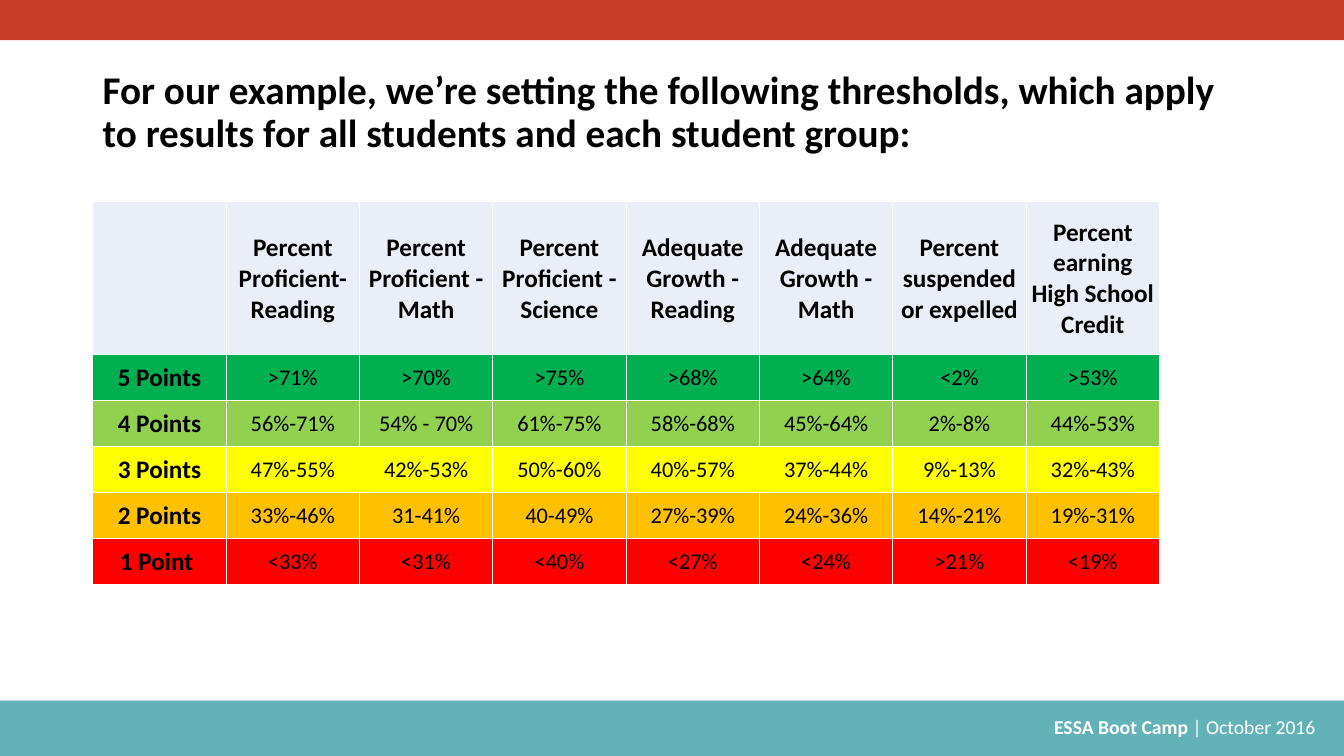
from pptx import Presentation
from pptx.dml.color import RGBColor
from pptx.enum.shapes import MSO_SHAPE as Shape
from pptx.enum.text import MSO_ANCHOR as Anchor, PP_ALIGN as Align
from pptx.oxml.ns import qn
from pptx.util import Inches, Pt
from lxml.etree import SubElement

WHITE = RGBColor(0xFF, 0xFF, 0xFF)
BLACK = RGBColor(0x00, 0x00, 0x00)
RED_BAR = RGBColor(0xC8, 0x3C, 0x2A)
TEAL = RGBColor(0x63, 0xB2, 0xB8)
PALE = RGBColor(0xEA, 0xEF, 0xF7)
GREEN = RGBColor(0x00, 0xB0, 0x50)
LIME = RGBColor(0x92, 0xD0, 0x50)
YELLOW = RGBColor(0xFF, 0xFF, 0x00)
AMBER = RGBColor(0xFF, 0xC0, 0x00)
RED = RGBColor(0xFF, 0x00, 0x00)
FONT = "Calibri"
WIDTH, HEIGHT = 13.33, 7.5
HEAD_H = 1.52

TITLE = ("For our example, we’re setting the following thresholds, which apply "
         "to results for all students and each student group:")
ROWS = [
    (PALE, ["", "Percent Proficient- Reading", "Percent Proficient - Math",
            "Percent Proficient - Science", "Adequate Growth - Reading",
            "Adequate Growth - Math", "Percent suspended or expelled",
            "Percent earning High School Credit"]),
    (GREEN, ["5 Points", ">71%", ">70%", ">75%", ">68%", ">64%", "<2%", ">53%"]),
    (LIME, ["4 Points", "56%-71%", "54% - 70%", "61%-75%", "58%-68%", "45%-64%",
            "2%-8%", "44%-53%"]),
    (YELLOW, ["3 Points", "47%-55%", "42%-53%", "50%-60%", "40%-57%", "37%-44%",
              "9%-13%", "32%-43%"]),
    (AMBER, ["2 Points", "33%-46%", "31-41%", "40-49%", "27%-39%", "24%-36%",
             "14%-21%", "19%-31%"]),
    (RED, ["1 Point ", "<33%", "<31%", "<40%", "<27%", "<24%", ">21%", "<19%"]),
]


def style(font, size, color, bold):
    font.name, font.size, font.bold = FONT, Pt(size), bold
    font.color.rgb = color


def add_bar(slide, x, y, w, h, color):
    bar = slide.shapes.add_shape(Shape.RECTANGLE, Inches(x), Inches(y), Inches(w), Inches(h))
    bar.shadow.inherit = False
    bar.fill.solid()
    bar.fill.fore_color.rgb = color
    bar.line.fill.background()


def add_text(slide, x, y, w, h):
    frame = slide.shapes.add_textbox(Inches(x), Inches(y), Inches(w), Inches(h)).text_frame
    frame.word_wrap = True
    return frame


def add_title(slide, x, y, w, h):
    frame = add_text(slide, x, y, w, h)
    frame.vertical_anchor = Anchor.MIDDLE
    frame.text = TITLE
    para = frame.paragraphs[0]
    para.line_spacing = 0.9
    style(para.runs[0].font, 28, BLACK, True)


def add_footer(slide, x, y, w, h):
    add_bar(slide, x, y, w, h, TEAL)
    para = add_text(slide, x + 4.8, y + 0.09, w - 4.94, 0.34).paragraphs[0]
    para.alignment = Align.RIGHT
    for text, bold in (("ESSA Boot Camp ", True), ("| October 2016 ", False)):
        run = para.add_run()
        run.text = text
        style(run.font, 14, WHITE, bold)


def add_borders(cell):
    props = cell._tc.get_or_add_tcPr()
    for side in ("a:lnL", "a:lnR", "a:lnT", "a:lnB"):
        line = SubElement(props, qn(side), w=str(Pt(1)))
        fill = SubElement(line, qn("a:solidFill"))
        SubElement(fill, qn("a:srgbClr"), val=str(WHITE))


def fill_cell(cell, text, color, label):
    add_borders(cell)
    cell.fill.solid()
    cell.fill.fore_color.rgb = color
    if not text:
        return
    cell.vertical_anchor = Anchor.MIDDLE
    cell.margin_left = cell.margin_right = cell.margin_top = Inches(0.01)
    cell.margin_bottom = 0
    cell.text = text
    para = cell.text_frame.paragraphs[0]
    para.alignment = Align.CENTER
    style(para.runs[0].font, 18 if label else 16, BLACK, label)


def add_grid(slide, x, y, w, h):
    count = len(ROWS[0][1])
    table = slide.shapes.add_table(len(ROWS), count, Inches(x), Inches(y),
                                   Inches(w), Inches(h)).table
    table.first_row = table.horz_banding = False
    for col in table.columns:
        col.width = Inches(w / count)
    for r, (color, texts) in enumerate(ROWS):
        table.rows[r].height = Inches((h - HEAD_H) / (len(ROWS) - 1) if r else HEAD_H)
        for c, text in enumerate(texts):
            fill_cell(table.cell(r, c), text, color, r == 0 or c == 0)


def main():
    deck = Presentation()
    deck.slide_width, deck.slide_height = Inches(WIDTH), Inches(HEIGHT)
    slide = deck.slides.add_slide(deck.slide_layouts[6])
    # Bands across the top and bottom
    add_footer(slide, 0, 6.95, WIDTH, 0.55)
    add_bar(slide, 0, 0, WIDTH, 0.4, RED_BAR)
    # Heading and thresholds
    add_title(slide, 0.92, 0.4, 11.5, 1.45)
    add_grid(slide, 0.92, 2, 10.58, 3.8)
    deck.save("out.pptx")


if __name__ == "__main__":
    main()
